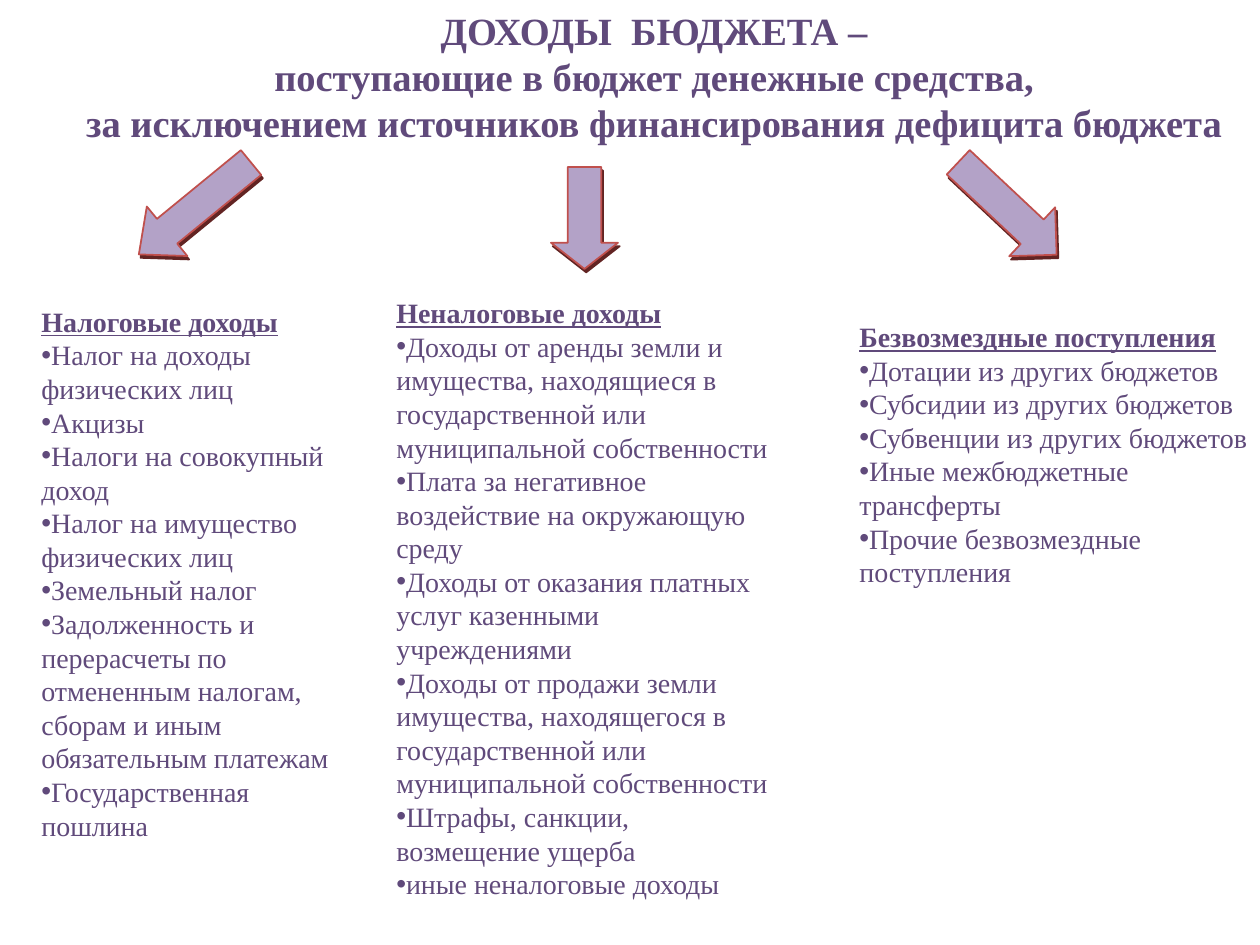
from dataclasses import dataclass

from lxml import etree
from pptx import Presentation
from pptx import util as u
from pptx.dml.color import RGBColor
from pptx.enum import shapes, text
from pptx.oxml.ns import qn

PX = u.Inches(1) // 126
FONT, PURPLE = "Times New Roman", "604A7B"
LILAC, RED, MAROON = "B3A2C7", "C0504D", "622423"


@dataclass
class Box:
    """Place and size in px."""
    x: int
    y: int
    w: int
    h: int

    def emu(self) -> list[int]:
        """Return left, top, width and height in EMU."""
        return [v * PX for v in (self.x, self.y, self.w, self.h)]


@dataclass
class Arrow:
    """A down arrow with its rotation and head proportion."""
    box: Box
    rotation: float
    head: float


@dataclass
class Column:
    """A group of revenues under a heading."""
    box: Box
    heading: str
    items: list[str]


TITLE = Box(0, 0, 1260, 152)
TITLE_LINES = [
    "ДОХОДЫ  БЮДЖЕТА –",
    "поступающие в бюджет денежные средства,",
    "за исключением источников финансирования дефицита бюджета",
]
ARROWS = [
    Arrow(Box(163, 136, 64, 145), 50.7, 0.57),
    Arrow(Box(551, 167, 67, 102), 0, 0.39),
    Arrow(Box(974, 141, 67, 135), 313.2, 0.5),
]
COLUMNS = [
    Column(Box(29, 295, 325, 556), "Налоговые доходы", [
        "Налог на доходы физических лиц",
        "Акцизы",
        "Налоги на совокупный доход",
        "Налог на имущество физических лиц",
        "Земельный налог",
        "Задолженность и перерасчеты по отмененным налогам, сборам и иным "
        "обязательным платежам",
        "Государственная пошлина",
    ]),
    Column(Box(384, 286, 403, 624), "Неналоговые доходы", [
        "Доходы от аренды земли и имущества, находящиеся в государственной "
        "или муниципальной собственности",
        "Плата за негативное воздействие на окружающую среду",
        "Доходы от оказания платных услуг казенными учреждениями",
        "Доходы от продажи земли имущества, находящегося в государственной "
        "или муниципальной собственности",
        "Штрафы, санкции, возмещение ущерба",
        "иные неналоговые доходы",
    ]),
    Column(Box(847, 295, 413, 318), "Безвозмездные поступления", [
        "Дотации из других бюджетов",
        "Субсидии из других бюджетов",
        "Субвенции из других бюджетов",
        "Иные межбюджетные трансферты",
        "Прочие безвозмездные поступления",
    ]),
]


def rgb(color: str) -> RGBColor:
    """Turn a hex string into a colour."""
    return RGBColor.from_string(color)


def style(p, size: int, bold: bool, underline: bool = False) -> None:
    """Format every run of a paragraph."""
    for r in p.runs:
        r.font.name, r.font.size = FONT, u.Pt(size)
        r.font.bold, r.font.underline = bold, underline
        r.font.color.rgb = rgb(PURPLE)


def set_frame(tf) -> None:
    """Wrap the text and centre it vertically."""
    tf.word_wrap = True
    tf.auto_size = text.MSO_AUTO_SIZE.NONE
    tf.vertical_anchor = text.MSO_ANCHOR.MIDDLE


def draw_title(slide) -> None:
    """Move and fill the title placeholder."""
    sp = slide.shapes.title
    sp.left, sp.top, sp.width, sp.height = TITLE.emu()
    tf = sp.text_frame
    set_frame(tf)
    tf.text = "\n".join(TITLE_LINES)
    for p in tf.paragraphs:
        p.alignment = text.PP_ALIGN.CENTER
        pPr = p._p.get_or_add_pPr()
        pPr.set("marL", "0")
        pPr.set("indent", str(48 * PX))
        style(p, 22, True)


def add_shadow(sp) -> None:
    """Give a shape a hard shadow to the lower right."""
    sp.shadow.inherit = False
    effects = sp._element.spPr.find(qn("a:effectLst"))
    shadow = etree.SubElement(effects, qn("a:outerShdw"), blurRad="0",
                              dist=str(u.Pt(2.2)), dir=str(63 * 60000),
                              algn="ctr", rotWithShape="0")
    etree.SubElement(shadow, qn("a:srgbClr"), val=MAROON)


def draw_arrow(slide, arrow: Arrow) -> None:
    """Draw one block arrow."""
    sp = slide.shapes.add_shape(shapes.MSO_SHAPE.DOWN_ARROW, *arrow.box.emu())
    sp.adjustments[0], sp.adjustments[1] = 0.5, arrow.head
    sp.rotation = arrow.rotation
    sp.fill.solid()
    sp.fill.fore_color.rgb = rgb(LILAC)
    sp.line.color.rgb = rgb(RED)
    sp.line.width = u.Pt(1)
    add_shadow(sp)


def draw_column(slide, column: Column) -> None:
    """Draw an underlined heading with its bulleted items."""
    tf = slide.shapes.add_textbox(*column.box.emu()).text_frame
    set_frame(tf)
    tf.margin_right = 10 * PX
    tf.text = "\n".join([column.heading, *column.items])
    heading, *items = tf.paragraphs
    style(heading, 16, True, True)
    for p in items:
        pPr = p._p.get_or_add_pPr()
        etree.SubElement(pPr, qn("a:buFont"), typeface="Arial")
        etree.SubElement(pPr, qn("a:buChar"), char="•")
        style(p, 16, False)


def main() -> None:
    """Build the slide and save it."""
    prs = Presentation()
    prs.slide_width, prs.slide_height = u.Inches(10), u.Inches(7.5)
    slide = prs.slides.add_slide(prs.slide_layouts[5])
    draw_title(slide)
    for arrow in ARROWS:
        draw_arrow(slide, arrow)
    for column in COLUMNS:
        draw_column(slide, column)
    prs.save("out.pptx")


if __name__ == "__main__":
    main()
